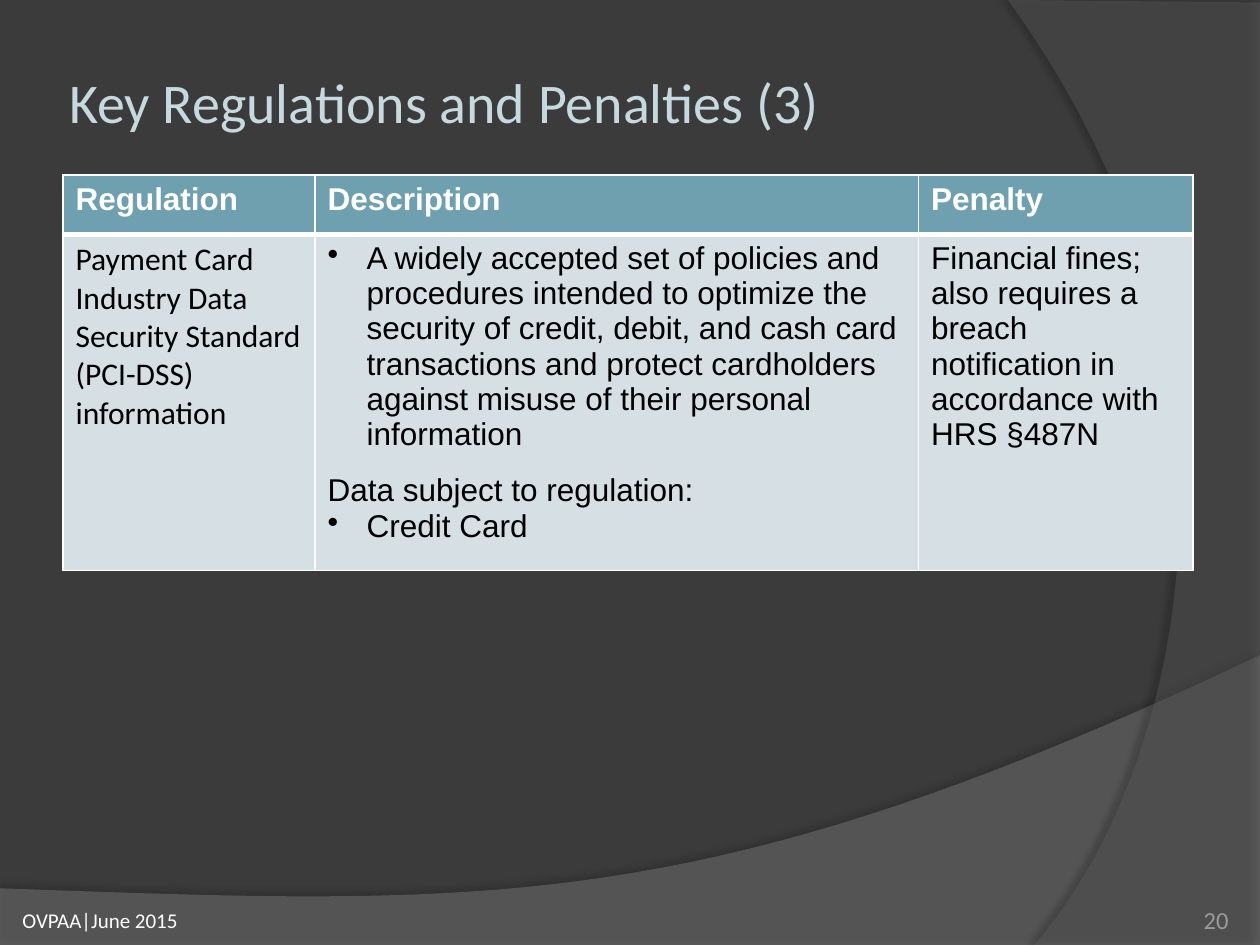
from lxml.etree import SubElement
from pptx import Presentation
from pptx.dml.color import RGBColor
from pptx.enum.text import MSO_ANCHOR, PP_ALIGN
from pptx.oxml import parse_xml
from pptx.oxml.ns import nsdecls, qn
from pptx.util import Inches, Pt

deck = Presentation()
deck.slide_width, deck.slide_height = Inches(10), Inches(7.5)
slide = deck.slides.add_slide(deck.slide_layouts[6])
shapes = slide.shapes


def paint(fill, tint, alpha=None):
    """Make a fill solid, with alpha as percent opacity."""
    fill.solid()
    fill.fore_color.rgb = RGBColor.from_string(tint)
    if alpha:
        node = fill._xPr.find(qn("a:solidFill"))[0]
        SubElement(node, qn("a:alpha")).set("val", str(alpha * 1000))


def write(frame, text, size=18, font="Arial", tint="000000", bold=False,
          align=PP_ALIGN.LEFT, anchor=MSO_ANCHOR.TOP, inset=None, gap=0):
    """Fill a frame line by line; a leading • becomes a real bullet."""
    frame.word_wrap = True
    frame.vertical_anchor = anchor
    if inset is not None:
        frame.margin_left = frame.margin_right = Inches(inset)
        frame.margin_top = frame.margin_bottom = Inches(inset)
    for i, line in enumerate(text.split("\n")):
        para = frame.paragraphs[0] if i == 0 else frame.add_paragraph()
        para.alignment = align
        if line.startswith("•"):
            props = para._p.get_or_add_pPr()
            props.set("marL", str(Inches(0.31)))
            props.set("indent", str(-Inches(0.31)))
            SubElement(props, qn("a:buChar")).set("char", "•")
        elif i:
            para.space_before = Pt(gap)
        run = para.add_run()
        run.text = line.lstrip("•")
        run.font.size, run.font.name, run.font.bold = Pt(size), font, bold
        paint(run.font.fill, tint)


paint(slide.background.fill, "3B3B3B")

# Background sweeps: straight corners, then a Bezier curve from the last one
# Shadow: opacity, distance in points, direction in degrees
sweeps = [
    ([(0, 7.05), (0, 7.51), (10, 7.51), (10, 5.2)],
     [(5.59, 7.29), (3.91, 7.19), (0, 7.05)], "7F7F7F", 45, (35, 3.5, 270)),
    ([(10, 0.02), (10, 7.5), (8.21, 7.5)],
     [(9.35, 6.19), (10.18, 3), (8, 0)], "5E5E5E", 40, (45, 4, 180)),
]
steps = 40
for corners, bend, tint, alpha, (dark, dist, angle) in sweeps:
    knots = [corners[-1]] + bend
    curve = []
    for n in range(1, steps + 1):
        t = n / steps
        parts = (1 - t) ** 3, 3 * t * (1 - t) ** 2, 3 * t * t * (1 - t), t ** 3
        curve.append([sum(w * k[axis] for w, k in zip(parts, knots))
                      for axis in (0, 1)])
    points = [(Inches(x), Inches(y)) for x, y in corners + curve]
    pen = shapes.build_freeform(*points[0])
    pen.add_line_segments(points[1:], close=True)
    sweep = pen.convert_to_shape()
    paint(sweep.fill, tint, alpha)
    sweep.line.fill.background()
    sweep._element.spPr.append(parse_xml(
        f'<a:effectLst {nsdecls("a")}><a:outerShdw blurRad="{Pt(4)}" '
        f'dist="{Pt(dist)}" dir="{angle * 60000}" rotWithShape="0">'
        f'<a:srgbClr val="000000"><a:alpha val="{dark * 1000}"/></a:srgbClr>'
        '</a:outerShdw></a:effectLst>'))

labels = [
    ((0.08, 7.1, 2.33, 0.4), "OVPAA|June 2015",
     dict(size=12, tint="FFFFFF", anchor=MSO_ANCHOR.MIDDLE)),
    ((0.5, 0.3, 8.17, 1.01), "Key Regulations and Penalties (3)",
     dict(size=32, tint="C5D9DF", anchor=MSO_ANCHOR.MIDDLE, inset=0.05)),
    ((8.92, 7.02, 0.83, 0.4), "20",
     dict(size=14, tint="9B9A98", anchor=MSO_ANCHOR.BOTTOM, inset=0,
          align=PP_ALIGN.RIGHT)),
]
for place, text, style in labels:
    box = shapes.add_textbox(*map(Inches, place))
    write(box.text_frame, text, font="Calibri", **style)

# Regulations table
rows = [
    ["Regulation", "Description", "Penalty"],
    ["Payment Card Industry Data Security Standard (PCI-DSS) information",
     "•A widely accepted set of policies and procedures intended to optimize "
     "the security of credit, debit, and cash card transactions and protect "
     "cardholders against misuse of their personal information\n"
     "Data subject to regulation:\n•Credit Card",
     "Financial fines;\nalso requires a breach notification in accordance "
     "with HRS §487N"],
]
widths, heights = [2, 4.79, 2.18], [0.47, 2.5]
grid = shapes.add_table(2, 3, Inches(0.5), Inches(1.39),
                        Inches(sum(widths)), Inches(sum(heights))).table
for col, width in zip(grid.columns, widths):
    col.width = Inches(width)
for r, row in enumerate(rows):
    grid.rows[r].height = Inches(heights[r])
    head = r == 0
    for c, text in enumerate(row):
        cell = grid.cell(r, c)
        write(cell.text_frame, text, bold=head,
              font="Calibri" if (r, c) == (1, 0) else "Arial",
              tint="FFFFFF" if head else "000000", gap=12 if c == 1 else 0)
        props = cell._tc.get_or_add_tcPr()
        for side in "LRTB":
            thick = 3 if side == ("B" if head else "T") else 1
            props.append(parse_xml(
                f'<a:ln{side} {nsdecls("a")} w="{Pt(thick)}"><a:solidFill>'
                f'<a:srgbClr val="FFFFFF"/></a:solidFill></a:ln{side}>'))
        paint(cell.fill, "6EA0B0" if head else "D5DFE4")

deck.save("out.pptx")
